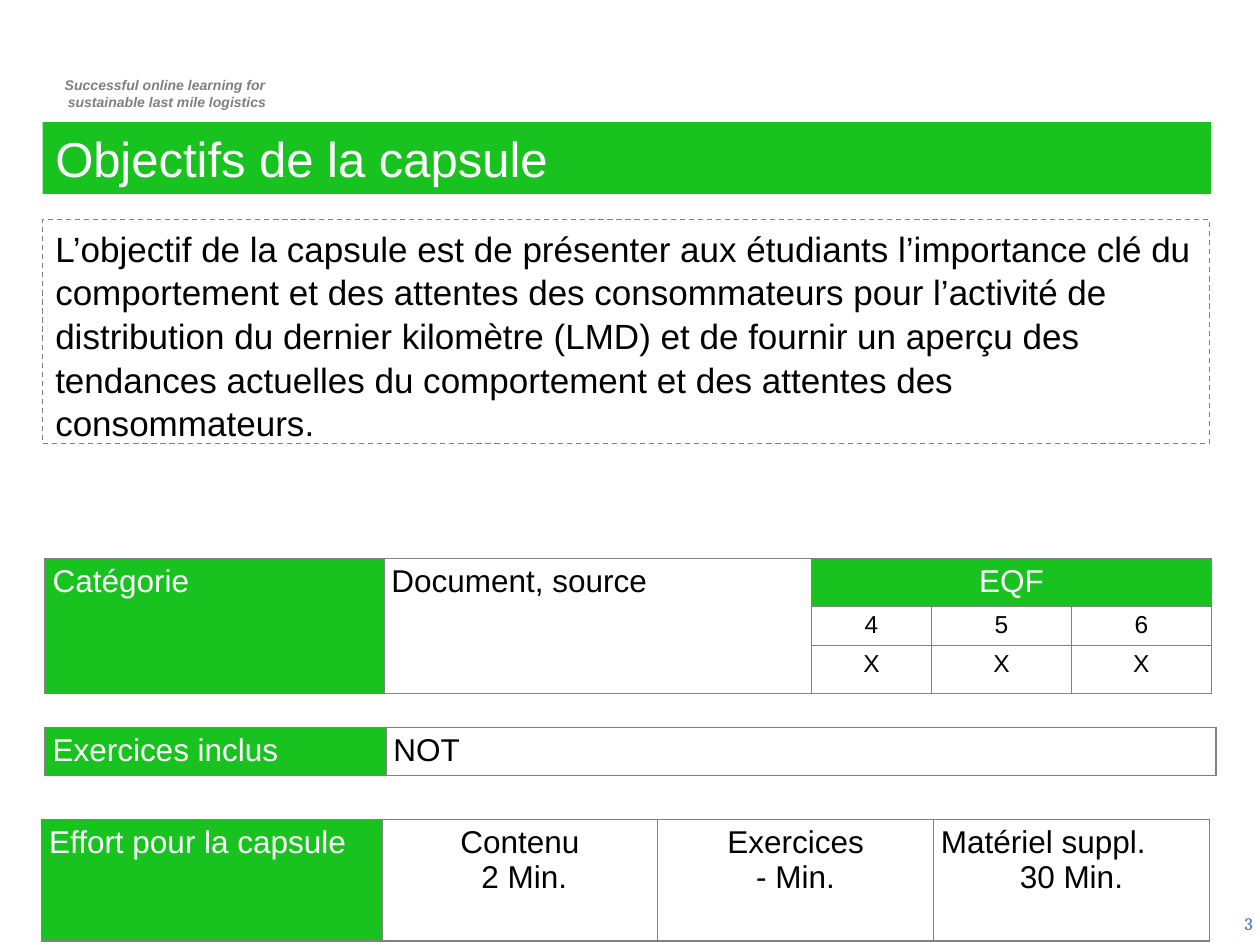
"""Build the slide presenting the objectives of the learning capsule."""
from dataclasses import dataclass

from lxml.etree import SubElement
from pptx import Presentation
from pptx.dml.color import RGBColor
from pptx.enum.dml import MSO_LINE
from pptx.enum.text import MSO_ANCHOR, MSO_AUTO_SIZE, PP_ALIGN
from pptx.oxml.ns import qn
from pptx.util import Cm, Pt


@dataclass(frozen=True)
class Theme:
    green: str = "18C320"
    white: str = "FFFFFF"
    black: str = "000000"
    border: str = "808080"
    grey: str = "7F7F7F"
    blue: str = "3366CC"
    font: str = "Arial"
    number_font: str = "Cambria"
    title: int = 28
    body: int = 20
    label: int = 18
    level: int = 14
    number: int = 10
    tagline: int = 8


theme = Theme()
LEFT, CENTER, RIGHT = PP_ALIGN.LEFT, PP_ALIGN.CENTER, PP_ALIGN.RIGHT


def write(frame, lines, size, color, font=theme.font, emphasis=False):
    frame.word_wrap = True
    for index, (text, alignment) in enumerate(lines):
        paragraph = frame.paragraphs[0] if index == 0 else frame.add_paragraph()
        paragraph.alignment = alignment
        paragraph.space_before = Pt(0)
        run = paragraph.add_run()
        run.text = text
        run.font.name = font
        run.font.size = Pt(size)
        run.font.bold = run.font.italic = emphasis
        run.font.color.rgb = RGBColor.from_string(color)


def format_cell(cell, filled):
    cell.margin_left = cell.margin_right = Cm(0.15)
    cell.margin_top = cell.margin_bottom = Cm(0.1)
    properties = cell._tc.get_or_add_tcPr()
    for side in ("a:lnL", "a:lnR", "a:lnT", "a:lnB"):
        line = SubElement(properties, qn(side), w=str(Pt(1)))
        solid = SubElement(line, qn("a:solidFill"))
        SubElement(solid, qn("a:srgbClr"), val=theme.border)
    if filled:
        cell.fill.solid()
        cell.fill.fore_color.rgb = RGBColor.from_string(theme.green)
    else:
        cell.fill.background()


presentation = Presentation()
presentation.slide_width, presentation.slide_height = Cm(25.4), Cm(19.05)
slide = presentation.slides.add_slide(presentation.slide_layouts[1])

title = slide.shapes.title
title.left, title.top, title.width, title.height = Cm(0.86), Cm(2.46), Cm(23.55), Cm(1.45)
title.fill.solid()
title.fill.fore_color.rgb = RGBColor.from_string(theme.green)
title.text_frame.auto_size = MSO_AUTO_SIZE.NONE
title.text_frame.vertical_anchor = MSO_ANCHOR.MIDDLE
write(title.text_frame, [("Objectifs de la capsule", LEFT)], theme.title, theme.white)

body = slide.placeholders[1]
body.left, body.top, body.width, body.height = Cm(0.86), Cm(4.42), Cm(23.52), Cm(4.52)
body.line.color.rgb = RGBColor.from_string(theme.border)
body.line.width = Pt(0.75)
body.line.dash_style = MSO_LINE.DASH
body.text_frame.auto_size = MSO_AUTO_SIZE.NONE
objective = (
    "L’objectif de la capsule est de présenter aux étudiants l’importance clé du "
    "comportement et des attentes des consommateurs pour l’activité de distribution "
    "du dernier kilomètre (LMD) et de fournir un aperçu des tendances actuelles du "
    "comportement et des attentes des consommateurs."
)
paragraph_properties = body.text_frame.paragraphs[0]._p.get_or_add_pPr()
paragraph_properties.set("marL", "0")
paragraph_properties.set("indent", "0")
SubElement(paragraph_properties, qn("a:buNone"))
write(body.text_frame, [(objective, LEFT)], theme.body, theme.black)
body.text_frame.paragraphs[0].line_spacing = 1.04

tagline = slide.shapes.add_textbox(Cm(0.74), Cm(1.42), Cm(5.16), Cm(0.94))
tagline_lines = [
    ("Successful online learning for ", CENTER),
    ("sustainable last mile logistics", CENTER),
]
write(tagline.text_frame, tagline_lines, theme.tagline, theme.grey, emphasis=True)
for paragraph in tagline.text_frame.paragraphs:
    paragraph._p.get_or_add_pPr().set("marL", str(Cm(0.1)))

page_number = slide.shapes.add_textbox(Cm(19.58), Cm(18.11), Cm(5.82), Cm(1.02))
page_number.text_frame.vertical_anchor = MSO_ANCHOR.MIDDLE
page_number.text_frame.margin_right = Cm(0.15)
write(page_number.text_frame, [("3", RIGHT)], theme.number, theme.blue, theme.number_font)

category_cells = {
    (0, 0): [("Catégorie", LEFT)],
    (0, 1): [("Document, source", LEFT)],
    (0, 2): [("EQF", CENTER)],
}
for column, level in enumerate("456", start=2):
    category_cells[1, column] = [(level, CENTER)]
    category_cells[2, column] = [("X", CENTER)]
exercise_cells = {(0, 0): [("Exercices inclus", LEFT)], (0, 1): [("NOT", LEFT)]}
effort_cells = {
    (0, 0): [("Effort pour la capsule", LEFT)],
    (0, 1): [("Contenu", CENTER), (" 2 Min.", CENTER)],
    (0, 2): [("Exercices", CENTER), ("- Min.", CENTER)],
    (0, 3): [("Matériel suppl.", LEFT), ("30 Min.", CENTER)],
}
category_merges = [((0, 0), (2, 0)), ((0, 1), (2, 1)), ((0, 2), (0, 4))]
tables = [
    (0.91, 11.26, [6.83, 8.62, 2.42, 2.82, 2.82], [0.95, 0.79, 0.94], category_cells, category_merges),
    (0.91, 14.67, [6.87, 16.73], [0.95], exercise_cells, []),
    (0.84, 16.52, [6.86, 5.56, 5.56, 5.56], [2.45], effort_cells, []),
]

for left, top, widths, heights, contents, merges in tables:
    frame = slide.shapes.add_table(
        len(heights), len(widths), Cm(left), Cm(top), Cm(sum(widths)), Cm(sum(heights))
    )
    table = frame.table
    table.first_row = table.horz_banding = False
    for column, width in zip(table.columns, widths):
        column.width = Cm(width)
    for row, height in zip(table.rows, heights):
        row.height = Cm(height)
    for start, end in merges:
        table.cell(*start).merge(table.cell(*end))
    for row in range(len(heights)):
        for column in range(len(widths)):
            cell = table.cell(row, column)
            lines = contents.get((row, column), [])
            filled = column == 0 or lines == [("EQF", CENTER)]
            format_cell(cell, filled)
            size = theme.level if row else theme.label
            write(cell.text_frame, lines, size, theme.white if filled else theme.black)

presentation.save("out.pptx")
